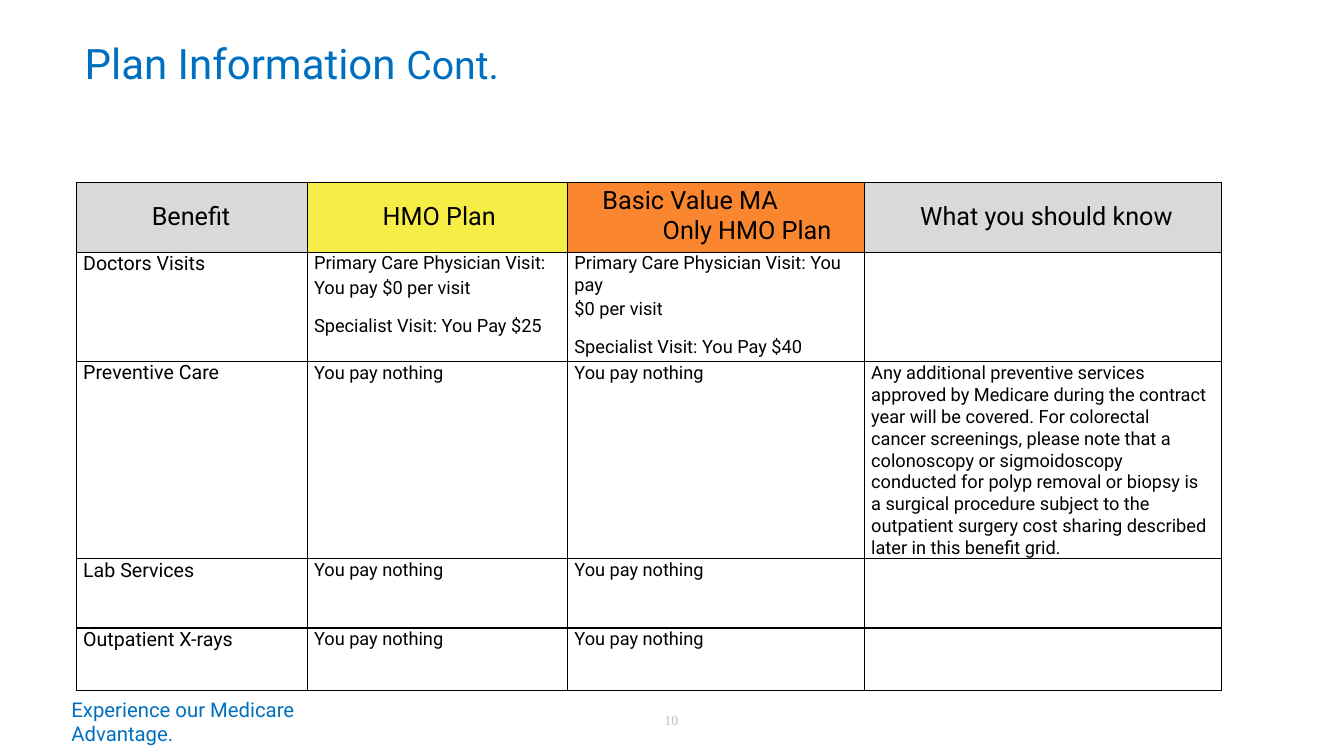
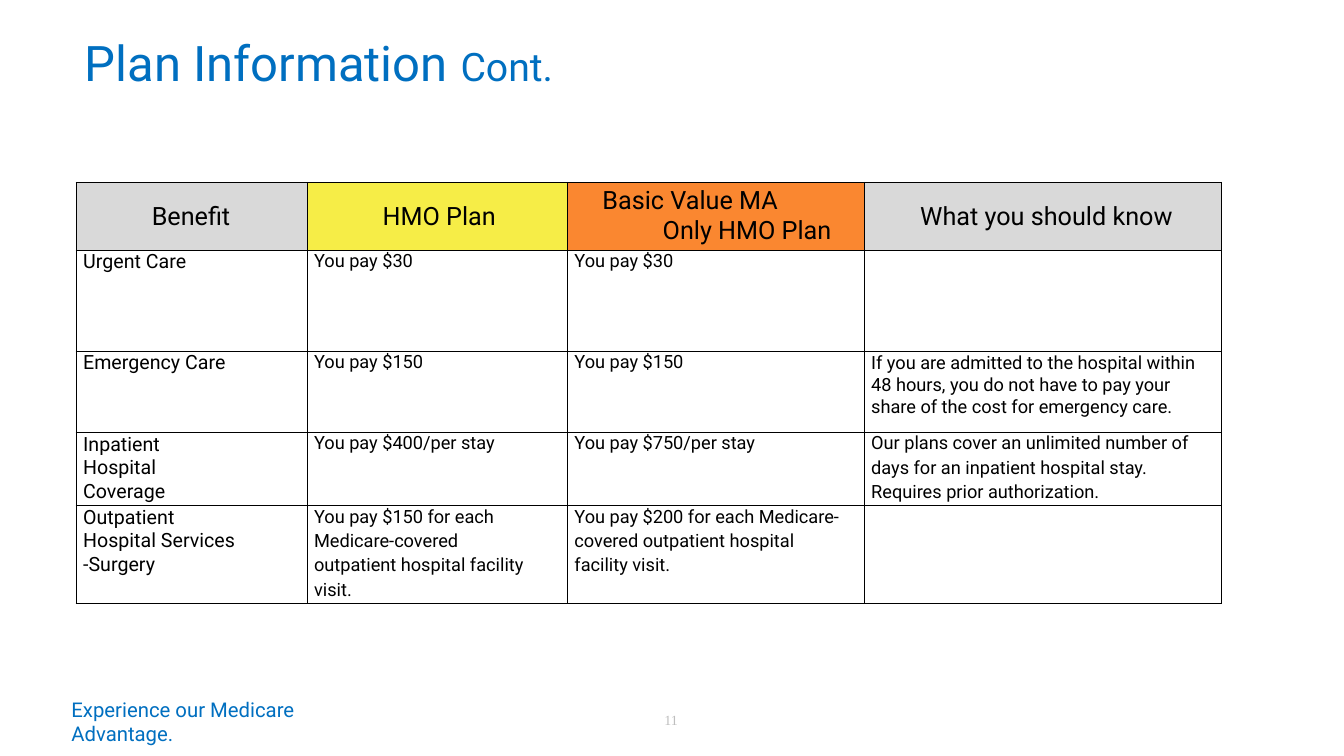
from dataclasses import dataclass

from lxml.etree import SubElement
from pptx import Presentation
from pptx.dml.color import RGBColor
from pptx.enum.text import MSO_ANCHOR as Anchor, MSO_AUTO_SIZE as AutoSize, PP_ALIGN as Align
from pptx.oxml.ns import qn
from pptx.util import Pt

BLUE, BLACK, WHITE, PALE = "006FC0", "000000", "FFFFFF", "BEBEBE"
GRAY, YELLOW, ORANGE = "D9D9D9", "F6ED47", "FA8730"
SANS, SERIF = "Roboto", "Times New Roman"
COLUMN_WIDTHS = (165, 186, 212, 255)
TABLE_LEFT, TABLE_TOP = 54.4, 130.3
TEXT_INSET, NOTE_RIGHT = 5, 9
BENEFIT_SIZE, DETAIL_SIZE = 14, 13
NOTHING = "You pay nothing"


@dataclass(frozen=True)
class Line:
    text: str
    before: float = 0
    spacing: float | None = None
    exact: bool = False


@dataclass(frozen=True)
class Entry:
    lines: tuple[Line, ...] = ()
    right: float = 0


@dataclass(frozen=True)
class Heading:
    text: str
    fill: str
    left: float
    hanging: float = 0
    top: float = 14.2


@dataclass(frozen=True)
class Benefit:
    height: float
    entries: tuple[Entry, ...]


@dataclass(frozen=True)
class PlanPage:
    number: int
    title_size: float
    title_top: float
    heading_height: float
    benefits: tuple[Benefit, ...]


def entry(*lines: Line | str, right: float = 0) -> Entry:
    return Entry(tuple(Line(line) if isinstance(line, str) else line for line in lines), right)


def exact_entry(text: str, pitch: float, right: float) -> Entry:
    return entry(Line(text, spacing=pitch, exact=True), right=right)


def visits(first: str, second: str, specialist: str) -> Entry:
    return entry(first, Line(second, before=2.4), Line(specialist, before=12.2))


def loose(text: str) -> Line:
    return Line(text, spacing=1.15)


HEADINGS = (
    Heading("Benefit", GRAY, 54),
    Heading("HMO Plan", YELLOW, 54),
    Heading("Basic Value MA\vOnly HMO Plan", ORANGE, 68, hanging=43, top=2.7),
    Heading("What you should know", GRAY, 40),
)

PAGES = (
    PlanPage(10, 30, 6, 50, (
        Benefit(78, (
            entry("Doctors Visits"),
            visits("Primary Care Physician Visit:", "You pay $0 per visit",
                   "Specialist Visit: You Pay $25"),
            visits("Primary Care Physician Visit: You pay", "$0 per visit",
                   "Specialist Visit: You Pay $40"),
            entry(),
        )),
        Benefit(140, (
            entry("Preventive Care"),
            entry(NOTHING),
            entry(NOTHING),
            exact_entry(
                "Any additional preventive services approved by Medicare during the contract "
                "year will be covered. For colorectal\vcancer screenings, please note that a "
                "colonoscopy or sigmoidoscopy\vconducted for polyp removal or biopsy is\v"
                "a surgical procedure subject to the outpatient surgery cost sharing described "
                "later in this benefit grid.", 15.6, NOTE_RIGHT),
        )),
        Benefit(49.5, (entry("Lab Services"), entry(NOTHING), entry(NOTHING), entry())),
        Benefit(44.5, (entry("Outpatient X-rays"), entry(NOTHING), entry(NOTHING), entry())),
    )),
    PlanPage(11, 35, 2, 48.6, (
        Benefit(72, (entry("Urgent Care"), entry("You pay $30"), entry("You pay $30"), entry())),
        Benefit(58, (
            entry("Emergency Care"),
            entry("You pay $150"),
            entry("You pay $150"),
            exact_entry(
                "If you are admitted to the hospital within 48 hours, you do not have to pay "
                "your share of the cost for emergency care.", 15.6, NOTE_RIGHT),
        )),
        Benefit(52.4, (
            exact_entry("Inpatient Hospital Coverage", 16.8, 65),
            entry("You pay $400/per stay"),
            entry("You pay $750/per stay"),
            entry("Our plans cover an unlimited number of",
                  loose("days for an inpatient hospital stay. Requires prior authorization."),
                  right=NOTE_RIGHT),
        )),
        Benefit(69.2, (
            exact_entry("Outpatient Hospital Services -Surgery", 16.8, 47),
            entry("You pay $150 for each",
                  loose("Medicare-covered outpatient hospital facility visit."), right=22),
            entry("You pay $200 for each Medicare-",
                  loose("covered outpatient hospital facility visit."), right=11),
            entry(),
        )),
    )),
)


def color(value: str) -> RGBColor:
    return RGBColor.from_string(value)


def style(paragraph, size: float | None, ink: str, face: str = SANS) -> None:
    font = paragraph.font
    font.name = face
    font.color.rgb = color(ink)
    if size is not None:
        font.size = Pt(size)


def set_margins(target, left: float, top: float, right: float = 0) -> None:
    target.margin_left, target.margin_top = Pt(left), Pt(top)
    target.margin_right, target.margin_bottom = Pt(right), Pt(0)


def add_title(slide, size: float, top: float) -> None:
    title = slide.shapes.title
    title.left, title.top, title.width, title.height = Pt(52), Pt(21), Pt(631.5), Pt(62)
    frame = title.text_frame
    frame.auto_size, frame.word_wrap = AutoSize.NONE, True
    frame.vertical_anchor = Anchor.TOP
    set_margins(frame, 8.5, top)
    paragraph = frame.paragraphs[0]
    paragraph.alignment = Align.LEFT
    paragraph.line_spacing = 1.0
    style(paragraph, None, BLUE)
    for text, run_size in (("Plan Information ", size), ("Cont.", 28)):
        run = paragraph.add_run()
        run.text = text
        run.font.size = Pt(run_size)


def add_label(slide, text: str, box: tuple[float, float, float, float], inset: float,
              size: float, pitch: float, ink: str, face: str) -> None:
    frame = slide.shapes.add_textbox(*map(Pt, box)).text_frame
    frame.word_wrap = True
    set_margins(frame, inset, 0)
    paragraph = frame.paragraphs[0]
    paragraph.text = text
    paragraph.line_spacing = Pt(pitch)
    style(paragraph, size, ink, face)


def format_cell(cell, fill: str) -> None:
    properties = cell._tc.get_or_add_tcPr()
    for side in ("lnL", "lnR", "lnT", "lnB"):
        border = SubElement(properties, qn(f"a:{side}"), w=str(Pt(1)))
        solid = SubElement(border, qn("a:solidFill"))
        SubElement(solid, qn("a:srgbClr"), val=BLACK)
    cell.fill.solid()
    cell.fill.fore_color.rgb = color(fill)
    cell.vertical_anchor = Anchor.TOP


def write_heading(cell, heading: Heading) -> None:
    format_cell(cell, heading.fill)
    set_margins(cell, 0, heading.top)
    paragraph = cell.text_frame.paragraphs[0]
    paragraph.text = heading.text
    indents = paragraph._p.get_or_add_pPr()
    indents.set("marL", str(Pt(heading.left)))
    indents.set("indent", str(-Pt(heading.hanging)))
    style(paragraph, 18, BLACK)


def write_entry(cell, content: Entry, size: float) -> None:
    format_cell(cell, WHITE)
    set_margins(cell, TEXT_INSET, 0.5 if size == DETAIL_SIZE else 0, content.right)
    frame = cell.text_frame
    for index, line in enumerate(content.lines):
        paragraph = frame.add_paragraph() if index else frame.paragraphs[0]
        paragraph.text = line.text
        if line.before:
            paragraph.space_before = Pt(line.before)
        if line.spacing:
            paragraph.line_spacing = Pt(line.spacing) if line.exact else line.spacing
        style(paragraph, size, BLACK)


def add_benefit_table(slide, page: PlanPage) -> None:
    heights = [page.heading_height, *(benefit.height for benefit in page.benefits)]
    table = slide.shapes.add_table(
        len(heights), len(COLUMN_WIDTHS), Pt(TABLE_LEFT), Pt(TABLE_TOP),
        Pt(sum(COLUMN_WIDTHS)), Pt(sum(heights))).table
    table.first_row = table.horz_banding = False
    for column, width in zip(table.columns, COLUMN_WIDTHS):
        column.width = Pt(width)
    for row, height in zip(table.rows, heights):
        row.height = Pt(height)
    for column, heading in enumerate(HEADINGS):
        write_heading(table.cell(0, column), heading)
    for row, benefit in enumerate(page.benefits, start=1):
        for column, content in enumerate(benefit.entries):
            size = DETAIL_SIZE if column else BENEFIT_SIZE
            write_entry(table.cell(row, column), content, size)


def add_page(deck, page: PlanPage) -> None:
    slide = deck.slides.add_slide(deck.slide_layouts[5])
    add_title(slide, page.title_size, page.title_top)
    add_label(slide, "Experience our Medicare Advantage.", (50, 498, 228, 19),
              1, 14.5, 17.3, BLUE, SANS)
    add_label(slide, str(page.number), (471.6, 508.3, 17.3, 13),
              3, 10, 11.9, PALE, SERIF)
    add_benefit_table(slide, page)


def main() -> None:
    deck = Presentation()
    deck.slide_width, deck.slide_height = Pt(960), Pt(540)
    for page in PAGES:
        add_page(deck, page)
    deck.save("out.pptx")


if __name__ == "__main__":
    main()
